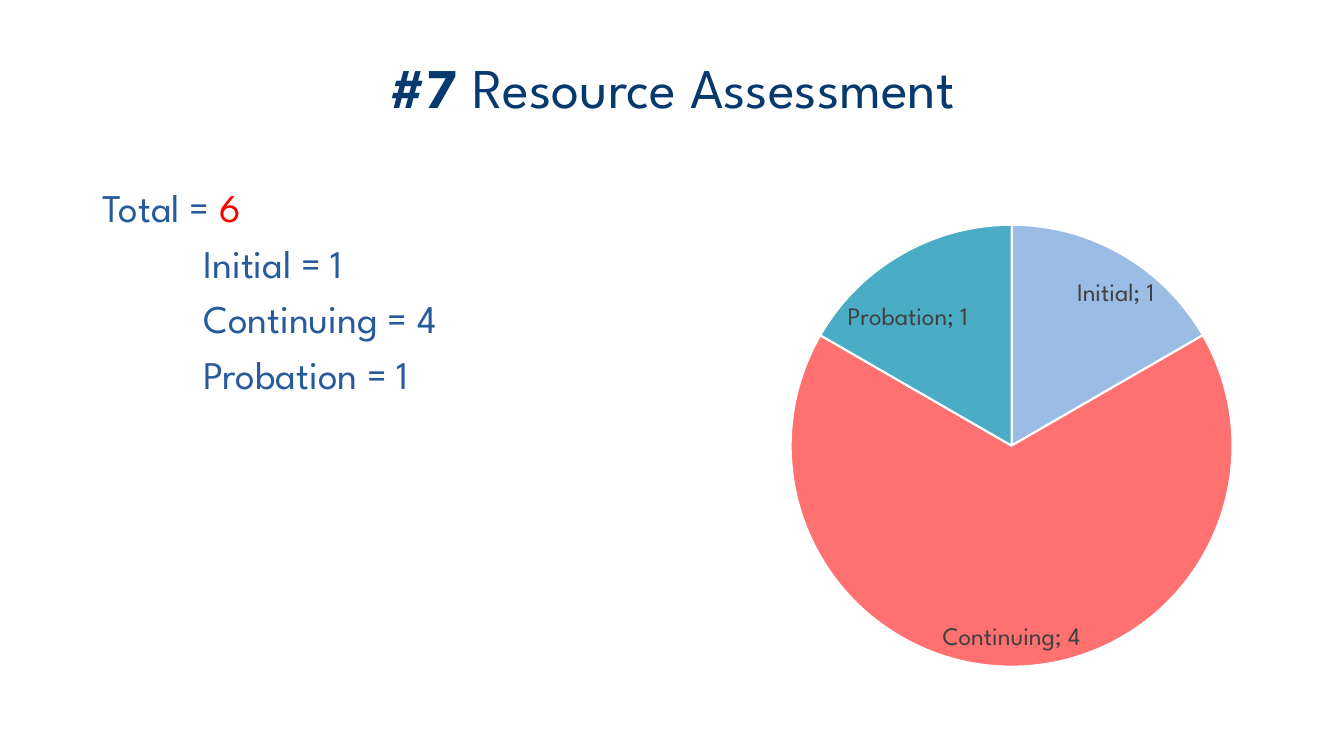
from lxml import etree
from pptx import Presentation
from pptx.chart.data import CategoryChartData
from pptx.dml.color import RGBColor
from pptx.enum.chart import XL_CHART_TYPE as ChartType, XL_LABEL_POSITION as LabelPosition
from pptx.enum.text import MSO_ANCHOR as Anchor, PP_ALIGN as Align
from pptx.oxml import parse_xml
from pptx.oxml.ns import nsdecls, qn
from pptx.util import Cm, Pt

FONT = "League Spartan"
COLORS = {
    "title": "06396D", "body": "285B9C", "total": "FF0000", "label": "404040", "edge": "FFFFFF",
    "Initial": "9BBCE5", "Continuing": "FF7070", "Probation": "4BACC6",
}
counts = {"Initial": 1, "Continuing": 4, "Probation": 1}
# Label shifts from the slice's inside end, in fractions of the chart frame
label_shifts = {"Initial": (0.05, 0.05), "Continuing": (0, -0.02), "Probation": (-0.08, 0.1)}


def style(font, size, color, bold=False):
    font.name = FONT
    font.size = Pt(size)
    font.bold = bold
    font.color.rgb = RGBColor.from_string(COLORS[color])


def manual_layout(**settings):
    """Return a chart layout element holding the settings in the given order."""
    parts = "".join(f'<c:{key} val="{value}"/>' for key, value in settings.items())
    return parse_xml(
        f'<c:layout {nsdecls("c")}><c:manualLayout>{parts}</c:manualLayout></c:layout>')


deck = Presentation()
deck.slide_width, deck.slide_height = Cm(33.87), Cm(19.05)
page = deck.slides.add_slide(deck.slide_layouts[5])

# Title, and totals with the breakdown indented below
title = page.shapes.title
title.left, title.top, title.width, title.height = Cm(1.7), Cm(1.11), Cm(30.48), Cm(2.11)
title.text_frame.vertical_anchor = Anchor.MIDDLE
heading = title.text_frame.paragraphs[0]
heading.alignment = Align.CENTER

box = page.shapes.add_textbox(Cm(1.7), Cm(4.5), Cm(14), Cm(6))
frame = box.text_frame
frame.word_wrap = True
total = frame.paragraphs[0]
total._p.get_or_add_pPr().set("marL", str(Cm(0.64)))

spans = [
    (heading, "#7 ", 40, "title", True),
    (heading, "Resource Assessment", 40, "title", False),
    (total, "Total = ", 28, "body", False),
    (total, str(sum(counts.values())), 28, "total", False),
]
for name, count in counts.items():
    para = frame.add_paragraph()
    para._p.get_or_add_pPr().set("marL", str(Cm(3.18)))
    para.space_before = Pt(6)
    spans.append((para, f"{name} = {count}", 28, "body", False))
for para, text, size, color, bold in spans:
    span = para.add_run()
    span.text = text
    style(span.font, size, color, bold)

# Pie chart
data = CategoryChartData()
data.categories = list(counts)
data.add_series("Series 1", list(counts.values()))
chart = page.shapes.add_chart(
    ChartType.PIE, Cm(16.05), Cm(4.93), Cm(17.82), Cm(12.24), data).chart
chart.has_legend = False
chart.has_title = False
style(chart.font, 18, "label")

area = chart._chartSpace.chart.plotArea
for old_layout in area.findall(qn("c:layout")):
    area.remove(old_layout)
area.insert(0, manual_layout(
    layoutTarget="inner", xMode="edge", yMode="edge", x=0.21, y=0.06, w=0.64, h=0.91))

plot = chart.plots[0]
plot.vary_by_categories = True
series = plot.series[0]
labels = series.data_labels
labels.show_category_name = True
labels.show_value = True
labels.show_percentage = False
labels.position = LabelPosition.INSIDE_END
style(labels.font, 18, "label")
label_elements = [labels._element]

for index, name in enumerate(counts):
    point = series.points[index]
    point.format.fill.solid()
    point.format.fill.fore_color.rgb = RGBColor.from_string(COLORS[name])
    point.format.line.color.rgb = RGBColor.from_string(COLORS["edge"])
    point.format.line.width = Pt(1.5)

    label = point.data_label
    style(label.font, 18, "label")
    label.position = LabelPosition.INSIDE_END
    element = labels._element.findall(qn("c:dLbl"))[index]
    shift_x, shift_y = label_shifts[name]
    element.find(qn("c:idx")).addnext(manual_layout(x=shift_x, y=shift_y))
    element.find(qn("c:showCatName")).set("val", "1")
    label_elements.append(element)

for element in label_elements:
    separator = etree.Element(qn("c:separator"))
    separator.text = "; "
    element.find(qn("c:showBubbleSize")).addnext(separator)

deck.save("out.pptx")
